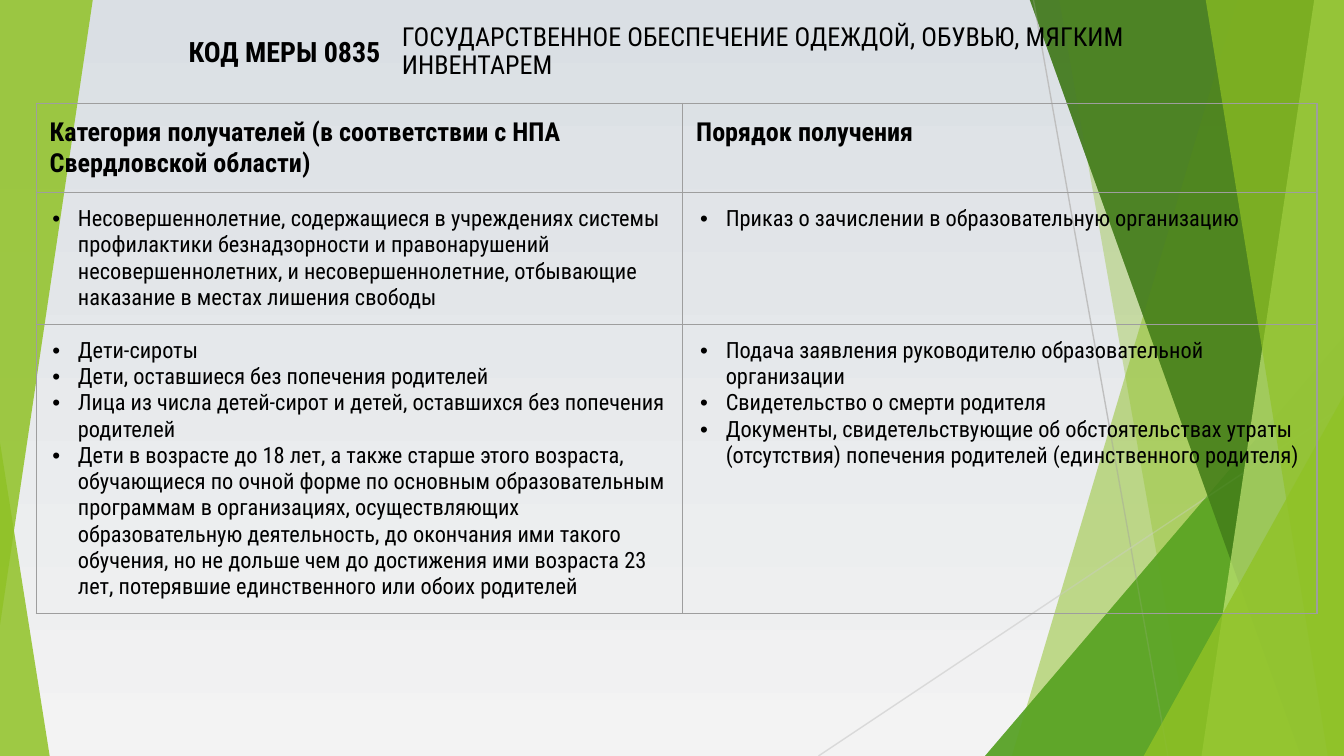
from dataclasses import dataclass

from lxml import etree
from pptx import Presentation
from pptx import util as u
from pptx.dml.color import RGBColor
from pptx.enum import shapes, text
from pptx.oxml import ns


@dataclass(frozen=True)
class Theme:
    font: str = "Roboto Condensed"
    ink: str = "000000"
    border: str = "9E9E9E"
    lime: str = "90C226"
    pale_lime: str = "C0E474"
    green: str = "54A021"
    forest: str = "3F7819"
    ray_dark: str = "BFBFBF"
    ray_light: str = "D9D9D9"
    sky: tuple = ("DADFE4", "F3F3F3")
    code_size: float = 15
    heading_size: float = 14
    body_size: float = 12
    hairline: float = 0.75


WIDTH = 10
HEIGHT = WIDTH * 9 / 16
BLEED = -0.01


class SlidePainter:
    def __init__(self, page, theme):
        self.page = page
        self.theme = theme

    def background(self):
        fill = self.page.background.fill
        fill.gradient()
        fill.gradient_angle = 270
        for stop, color in zip(fill.gradient_stops, self.theme.sky):
            stop.color.rgb = RGBColor.from_string(color)

    def tint(self, shape, color, opacity):
        shape.shadow.inherit = False
        shape.line.fill.background()
        shape.fill.solid()
        shape.fill.fore_color.rgb = RGBColor.from_string(color)
        node = shape._element.spPr.find(".//" + ns.qn("a:srgbClr"))
        etree.SubElement(node, ns.qn("a:alpha"), val=str(opacity * 1000))

    def band(self, top_x, bottom_x, color, opacity):
        corners = [(top_x, BLEED), (WIDTH, BLEED), (WIDTH, HEIGHT), (bottom_x, HEIGHT)]
        points = [(u.Inches(x), u.Inches(y)) for x, y in corners]
        builder = self.page.shapes.build_freeform(*points[0])
        builder.add_line_segments(points[1:], close=True)
        self.tint(builder.convert_to_shape(), color, opacity)

    def triangle(self, left, top, width, height, apex, color, opacity, rotation=0):
        shape = self.page.shapes.add_shape(
            shapes.MSO_SHAPE.ISOSCELES_TRIANGLE,
            *map(u.Inches, (left, top, width, height)))
        shape.adjustments[0] = apex
        shape.rotation = rotation
        self.tint(shape, color, opacity)

    def ray(self, x1, y1, x2, y2, color):
        line = self.page.shapes.add_connector(
            shapes.MSO_CONNECTOR.STRAIGHT, *map(u.Inches, (x1, y1, x2, y2)))
        line.line.color.rgb = RGBColor.from_string(color)
        line.line.width = u.Pt(self.theme.hairline)
        etree.SubElement(line._element.spPr, ns.qn("a:effectLst"))

    def right_facets(self):
        theme = self.theme
        self.band(9.21, 7.53, theme.lime, 30)
        self.band(7.88, 8.87, theme.lime, 20)
        self.triangle(7.33, 2.5, 2.67, HEIGHT - 2.5, 1, theme.green, 72)
        self.band(7.66, 9.68, theme.forest, 70)
        self.band(9.78, 8.94, theme.pale_lime, 70)
        self.band(8.97, 9.88, theme.lime, 65)
        self.triangle(8.51, 2.94, 1.49, HEIGHT - 2.94, 1, theme.lime, 80)

    def style(self, para, size, bold=False):
        para.font.name = self.theme.font
        para.font.size = u.Pt(size)
        para.font.bold = bold
        para.font.color.rgb = RGBColor.from_string(self.theme.ink)

    def label(self, left, width, words, size, insets, bold=False,
              align=text.PP_ALIGN.LEFT, spacing=1.0):
        box = self.page.shapes.add_textbox(
            u.Inches(left), 0, u.Inches(width), u.Inches(0.77))
        frame = box.text_frame
        frame.word_wrap = True
        frame.vertical_anchor = text.MSO_ANCHOR.MIDDLE
        frame.margin_left = frame.margin_right = u.Inches(insets[0])
        frame.margin_top = frame.margin_bottom = u.Inches(insets[1])
        para = frame.paragraphs[0]
        para.text = words
        para.alignment = align
        para.line_spacing = spacing
        self.style(para, size, bold)

    def bullet(self, para, indent):
        props = para._p.get_or_add_pPr()
        props.set("marL", str(u.Inches(indent)))
        props.set("indent", str(u.Inches(-0.19)))
        color = etree.SubElement(props, ns.qn("a:buClr"))
        etree.SubElement(color, ns.qn("a:srgbClr"), val=self.theme.ink)
        etree.SubElement(props, ns.qn("a:buFont"), typeface="Arial")
        etree.SubElement(props, ns.qn("a:buChar"), char="•")

    def outline(self, cell):
        props = cell._tc.get_or_add_tcPr()
        for side in ("lnL", "lnR", "lnT", "lnB"):
            edge = etree.SubElement(props, ns.qn(f"a:{side}"),
                                    w=str(u.Pt(self.theme.hairline)))
            fill = etree.SubElement(edge, ns.qn("a:solidFill"))
            etree.SubElement(fill, ns.qn("a:srgbClr"), val=self.theme.border)

    def cell(self, cell, lines, header, indent):
        self.outline(cell)
        cell.fill.background()
        cell.margin_left = cell.margin_right = u.Inches(0.1)
        cell.margin_top = cell.margin_bottom = u.Inches(0.1)
        cell.text_frame.text = "\n".join(lines)
        for para in cell.text_frame.paragraphs:
            if header:
                self.style(para, self.theme.heading_size, bold=True)
            else:
                self.bullet(para, indent)
                self.style(para, self.theme.body_size)

    def table(self, left, top, widths, heights, rows, indents):
        area = map(u.Inches, (left, top, sum(widths), sum(heights)))
        table = self.page.shapes.add_table(len(rows), len(widths), *area).table
        table.first_row = table.horz_banding = False
        for column, width in zip(table.columns, widths):
            column.width = u.Inches(width)
        for r, (row, height) in enumerate(zip(rows, heights)):
            table.rows[r].height = u.Inches(height)
            for c, lines in enumerate(row):
                self.cell(table.cell(r, c), lines, r == 0, indents[c])


ROWS = [
    (["Категория получателей (в соответствии с НПА Свердловской области)"],
     ["Порядок получения"]),
    (["Несовершеннолетние, содержащиеся в учреждениях системы профилактики "
      "безнадзорности и правонарушений несовершеннолетних, и несовершеннолетние, "
      "отбывающие наказание в местах лишения свободы"],
     ["Приказ о зачислении в образовательную организацию"]),
    (["Дети-сироты",
      "Дети, оставшиеся без попечения родителей",
      "Лица из числа детей-сирот и детей, оставшихся без попечения родителей",
      "Дети в возрасте до 18 лет, а также старше этого возраста, обучающиеся по очной "
      "форме по основным образовательным программам в организациях, осуществляющих "
      "образовательную деятельность, до окончания ими такого обучения, но не дольше "
      "чем до достижения ими возраста 23 лет, потерявшие единственного или обоих "
      "родителей"],
     ["Подача заявления руководителю образовательной организации",
      "Свидетельство о смерти родителя",
      "Документы, свидетельствующие об обстоятельствах утраты (отсутствия) попечения "
      "родителей (единственного родителя)"]),
]


def main():
    deck = Presentation()
    deck.slide_width, deck.slide_height = u.Inches(WIDTH), u.Inches(HEIGHT)
    theme = Theme()
    painter = SlidePainter(deck.slides.add_slide(deck.slide_layouts[6]), theme)

    painter.background()
    painter.right_facets()
    painter.triangle(0, 3.29, 0.37, HEIGHT - 3.29, 0, theme.lime, 85)
    painter.ray(7.69, 0, 8.69, HEIGHT, theme.ray_dark)
    painter.ray(WIDTH, 3.02, 6.09, HEIGHT, theme.ray_light)
    painter.right_facets()
    painter.triangle(0, 0, 0.69, 4.65, 1, theme.lime, 85, rotation=180)

    painter.table(0.27, 0.77, (4.81, 4.72), (0.66, 0.98, 2.15), ROWS, (0.21, 0.22))
    painter.label(0.82, 2.11, "КОД МЕРЫ 0835", theme.code_size, (0.1, 0.1),
                  bold=True, align=text.PP_ALIGN.RIGHT)
    painter.label(2.92, 6.3,
                  "ГОСУДАРСТВЕННОЕ ОБЕСПЕЧЕНИЕ ОДЕЖДОЙ, ОБУВЬЮ, МЯГКИМ ИНВЕНТАРЕМ",
                  theme.heading_size, (0.07, 0.04), spacing=0.9)
    deck.save("out.pptx")


if __name__ == "__main__":
    main()
